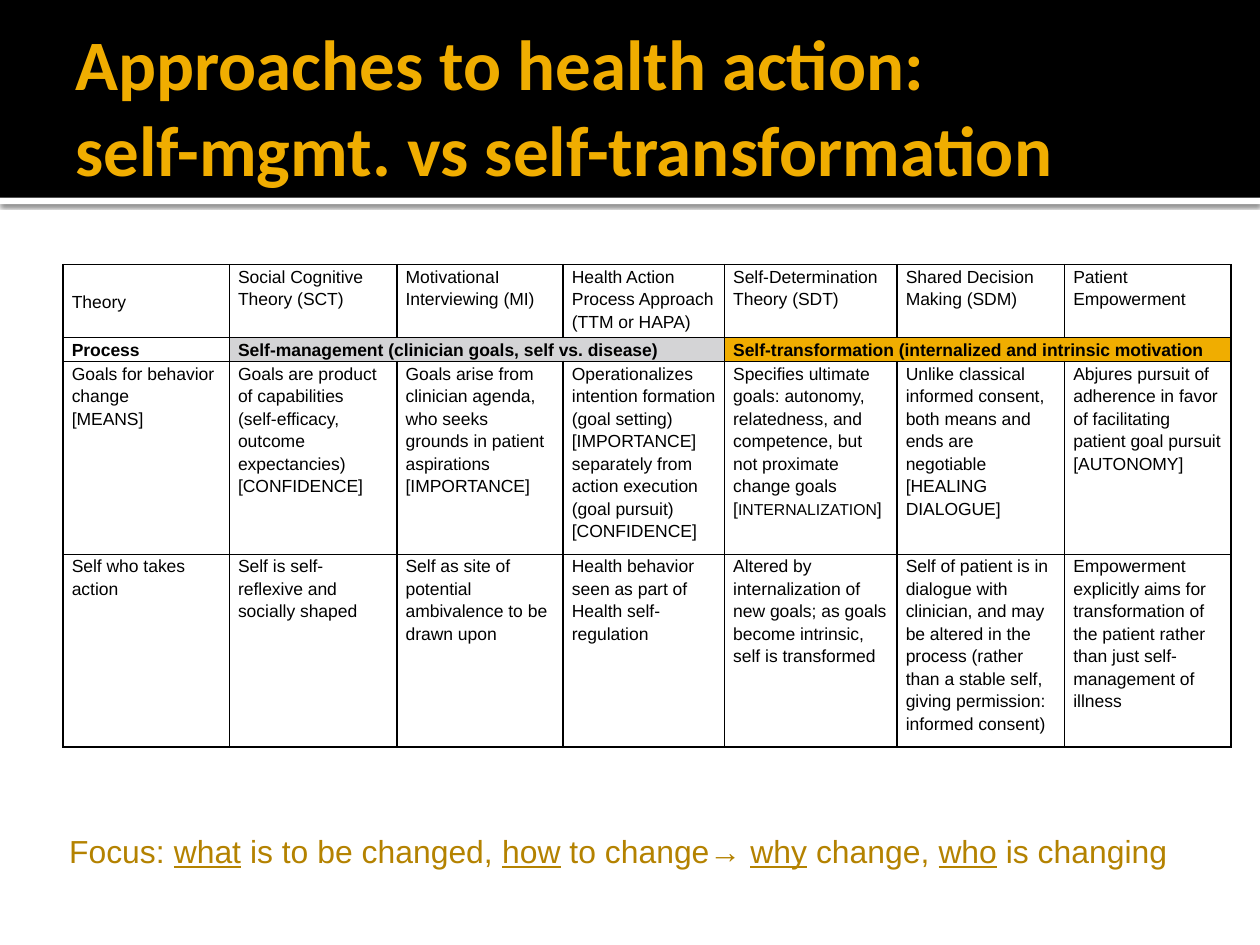
"""Build a slide comparing self-management with self-transformation theories."""
from dataclasses import dataclass
from typing import Any

from lxml.etree import SubElement
from pptx import Presentation
from pptx.dml.color import RGBColor
from pptx.enum.shapes import MSO_SHAPE
from pptx.enum.text import MSO_ANCHOR
from pptx.oxml.ns import qn
from pptx.util import Inches, Pt

SLIDE_WIDTH, SLIDE_HEIGHT = Inches(10), Inches(7.5)
COLORS = {
    "black": "000000",
    "white": "FFFFFF",
    "gold": "F0AD00",
    "dark gold": "B48200",
    "gray": "D4D4D6",
}


@dataclass(frozen=True)
class Frame:
    """Position and size in percent of the slide."""

    left: float
    top: float
    width: float
    height: float

    def lengths(self) -> tuple[int, int, int, int]:
        """Return the frame as slide lengths."""
        return (across(self.left), down(self.top), across(self.width), down(self.height))


@dataclass(frozen=True)
class Band:
    """A filled strip across the slide."""

    frame: Frame
    color: str
    shadow: bool = False


@dataclass(frozen=True)
class TextStyle:
    """Font of a text, and the font values of its |marked| parts."""

    font: dict[str, Any]
    color: str
    marked: dict[str, Any]
    line_spacing: float = 1.0


@dataclass(frozen=True)
class Label:
    """A free text with its frame, style and text frame values."""

    text: str
    frame: Frame
    style: TextStyle
    layout: dict[str, Any]


@dataclass(frozen=True)
class Process:
    """A heading that spans several theory columns."""

    text: str
    first_column: int
    last_column: int
    color: str


BANDS = [
    Band(Frame(0, 20.93, 100, 0.67), "white", shadow=True),
    Band(Frame(0, 0, 100, 20.93), "black"),
]
TITLE_STYLE = TextStyle({"name": "Calibri", "size": Pt(40.5), "bold": True}, "gold", {})
FOCUS_STYLE = TextStyle({"name": "Arial", "size": Pt(18.2)}, "dark gold", {"underline": True})
CELL_STYLE = TextStyle({"name": "Arial", "size": Pt(10)}, "black", {"size": Pt(9)}, 1.15)
HEADING_STYLE = TextStyle({**CELL_STYLE.font, "bold": True}, "black", {}, 1.15)
LABELS = [
    Label(
        "Approaches to health action:\nself-mgmt. vs self-transformation",
        Frame(5, 7.6, 90, 16.13),
        TITLE_STYLE,
        {
            "vertical_anchor": MSO_ANCHOR.MIDDLE,
            "margin_right": Inches(0.05),
            "margin_bottom": Inches(0.73),
        },
    ),
    Label(
        "Focus: |what| is to be changed, |how| to change→ |why| change, |who| is changing",
        Frame(4.5, 87.33, 93.2, 5.47),
        FOCUS_STYLE,
        {},
    ),
]
TABLE_FRAME = Frame(5, 28, 92.7, 51.07)
COLUMN_SHARES = [13.2, 13.3, 13.2, 12.8, 13.7, 13.3, 13.2]
ROW_SHARES = [7.73, 2.53, 20.4, 20.4]
PROCESS_ROW = 1
PROCESSES = [
    Process("Process", 0, 0, ""),
    Process("Self-management (clinician goals, self vs. disease)", 1, 3, "gray"),
    Process("Self-transformation (internalized and intrinsic motivation", 4, 6, "gold"),
]
CELL_LAYOUT = {
    "margin_left": Inches(0.07),
    "margin_right": Inches(0.07),
    "margin_top": 0,
    "margin_bottom": 0,
}
TEXT_ROWS = {
    0: [
        "Theory",
        "Social Cognitive Theory (SCT)",
        "MotivationaI\nInterviewing (MI)",
        "Health Action Process Approach (TTM or HAPA)",
        "Self-Determination Theory (SDT)",
        "Shared Decision Making (SDM)",
        "Patient Empowerment",
    ],
    2: [
        "Goals for behavior change\n[MEANS]",
        "Goals are product of capabilities\n(self-efficacy, outcome expectancies)\n[CONFIDENCE]",
        "Goals arise from clinician agenda, who seeks grounds in patient aspirations\n[IMPORTANCE]",
        "Operationalizes intention formation (goal setting) [IMPORTANCE]\n"
        "separately from action execution (goal pursuit)\n[CONFIDENCE]",
        "Specifies ultimate goals: autonomy, relatedness, and competence, "
        "but not proximate change goals\n[|INTERNALIZATION|]",
        "Unlike classical informed consent, both means and ends are negotiable\n[HEALING\nDIALOGUE]",
        "Abjures pursuit of adherence in favor of facilitating patient goal pursuit\n[AUTONOMY]",
    ],
    3: [
        "Self who takes action",
        "Self is self-reflexive and socially shaped",
        "Self as site of potential ambivalence to be drawn upon",
        "Health behavior seen as part of Health self-regulation",
        "Altered by internalization of new goals; as goals become intrinsic, self is transformed",
        "Self of patient is in dialogue with clinician, and may be altered in the process "
        "(rather than a stable self, giving permission: informed consent)",
        "Empowerment explicitly aims for transformation of the patient "
        "rather than just self-management of illness",
    ],
}


def across(percent: float) -> int:
    """Return a share of the slide width."""
    return round(SLIDE_WIDTH * percent / 100)


def down(percent: float) -> int:
    """Return a share of the slide height."""
    return round(SLIDE_HEIGHT * percent / 100)


def apply_values(target: Any, values: dict[str, Any]) -> None:
    """Set every named attribute of the target."""
    for name, value in values.items():
        setattr(target, name, value)


def paint(fill: Any, color: str) -> None:
    """Fill with a named color."""
    fill.solid()
    fill.fore_color.rgb = RGBColor.from_string(COLORS[color])


def write_text(text_frame: Any, text: str, style: TextStyle) -> None:
    """Write one paragraph per line, styling the |marked| parts."""
    for index, line in enumerate(text.split("\n")):
        paragraph = text_frame.add_paragraph() if index else text_frame.paragraphs[0]
        paragraph.line_spacing = style.line_spacing
        for position, part in enumerate(line.split("|")):
            run = paragraph.add_run()
            run.text = part
            apply_values(run.font, style.font | (style.marked if position % 2 else {}))
            run.font.color.rgb = RGBColor.from_string(COLORS[style.color])


def add_band(slide: Any, band: Band) -> None:
    """Draw a strip, with a soft shadow below it if wanted."""
    shape = slide.shapes.add_shape(MSO_SHAPE.RECTANGLE, *band.frame.lengths())
    paint(shape.fill, band.color)
    shape.line.fill.background()
    shape.shadow.inherit = False
    if band.shadow:
        effects = shape.element.spPr.find(qn("a:effectLst"))
        values = {"blurRad": Pt(2.5), "dist": Pt(0.8), "dir": 90 * 60000, "rotWithShape": 0}
        shadow = SubElement(effects, qn("a:outerShdw"), {key: str(int(value)) for key, value in values.items()})
        color = SubElement(shadow, qn("a:srgbClr"), val=COLORS["black"])
        SubElement(color, qn("a:alpha"), val="60000")


def add_label(slide: Any, label: Label) -> None:
    """Add a wrapped text box."""
    text_frame = slide.shapes.add_textbox(*label.frame.lengths()).text_frame
    apply_values(text_frame, {"word_wrap": True} | label.layout)
    write_text(text_frame, label.text, label.style)


def format_cell(cell: Any) -> None:
    """Give a cell its margins, black borders and an empty fill."""
    apply_values(cell, CELL_LAYOUT)
    properties = cell._tc.get_or_add_tcPr()
    for side in ("L", "R", "T", "B"):
        border = SubElement(properties, qn(f"a:ln{side}"), w=str(Pt(1)))
        fill = SubElement(border, qn("a:solidFill"))
        SubElement(fill, qn("a:srgbClr"), val=COLORS["black"])
    cell.fill.background()


def add_theory_table(slide: Any) -> None:
    """Add the table of theories, processes, goals and selves."""
    table = slide.shapes.add_table(len(ROW_SHARES), len(COLUMN_SHARES), *TABLE_FRAME.lengths()).table
    apply_values(table, {"first_row": False, "horz_banding": False})
    for column, share in zip(table.columns, COLUMN_SHARES):
        column.width = across(share)
    for row, share in zip(table.rows, ROW_SHARES):
        row.height = down(share)
    for cell in table.iter_cells():
        format_cell(cell)
    for row_index, texts in TEXT_ROWS.items():
        for column_index, text in enumerate(texts):
            write_text(table.cell(row_index, column_index).text_frame, text, CELL_STYLE)
    table.cell(0, 0).vertical_anchor = MSO_ANCHOR.MIDDLE
    for process in PROCESSES:
        cell = table.cell(PROCESS_ROW, process.first_column)
        if process.color:
            cell.merge(table.cell(PROCESS_ROW, process.last_column))
            paint(cell.fill, process.color)
        write_text(cell.text_frame, process.text, HEADING_STYLE)


def main() -> None:
    """Build and save the presentation."""
    presentation = Presentation()
    apply_values(presentation, {"slide_width": SLIDE_WIDTH, "slide_height": SLIDE_HEIGHT})
    slide = presentation.slides.add_slide(presentation.slide_layouts[6])
    for band in BANDS:
        add_band(slide, band)
    add_theory_table(slide)
    for label in LABELS:
        add_label(slide, label)
    presentation.save("out.pptx")


if __name__ == "__main__":
    main()
